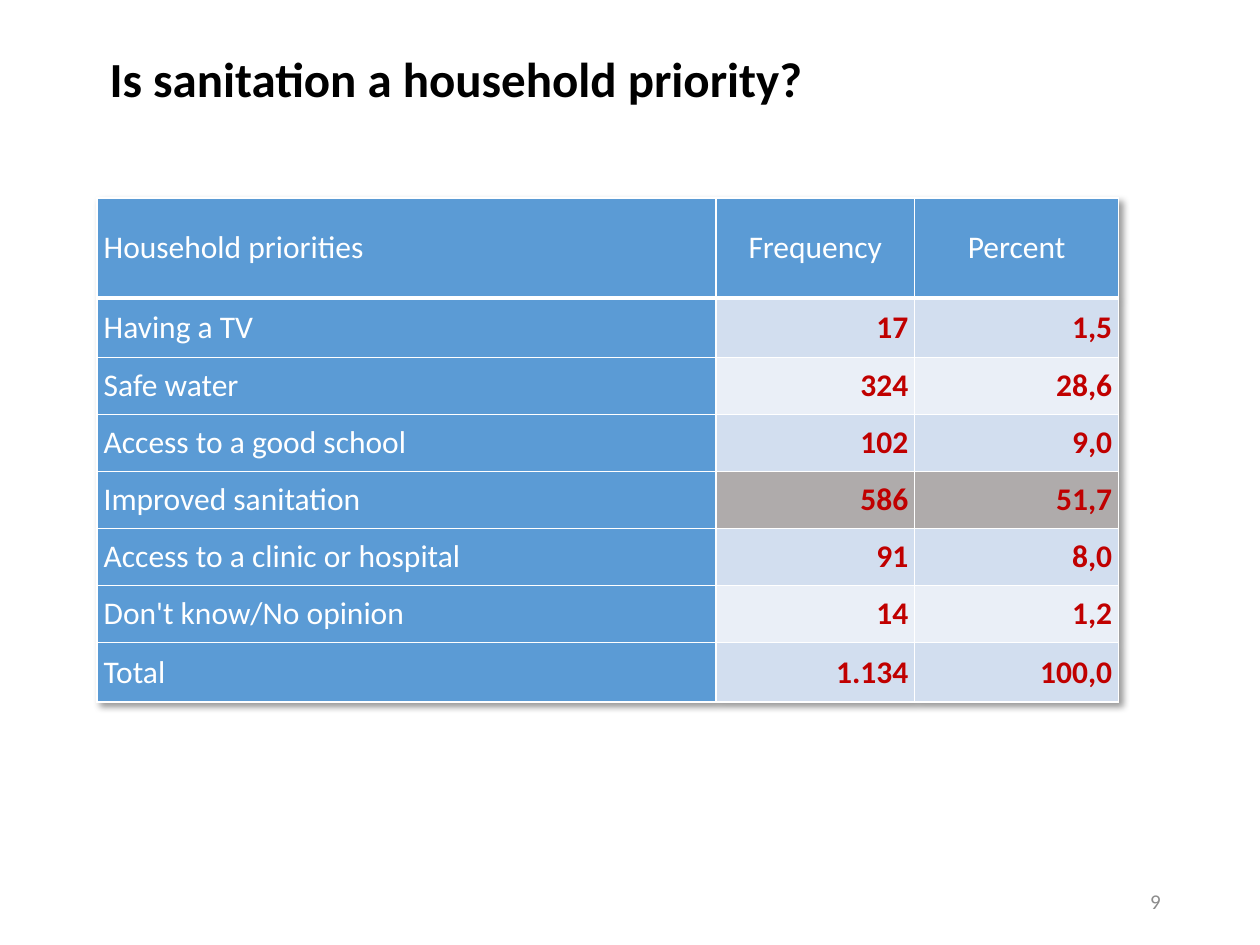
from pptx import Presentation
from pptx.dml.color import RGBColor as RGB
from pptx.enum.text import MSO_ANCHOR as Anchor, PP_ALIGN as Align
from pptx.oxml import parse_xml
from pptx.oxml.ns import nsdecls
from pptx.util import Cm, Pt

# Content
TITLE = "Is sanitation a household priority?"
PAGE = "9"
HEADER = ("Household priorities", "Frequency", "Percent")
ROWS = [
    ("Having a TV", "17", "1,5"),
    ("Safe water", "324", "28,6"),
    ("Access to a good school", "102", "9,0"),
    ("Improved sanitation", "586", "51,7"),
    ("Access to a clinic or hospital", "91", "8,0"),
    ("Don't know/No opinion", "14", "1,2"),
    ("Total", "1.134", "100,0"),
]
HIGHLIGHT = "Improved sanitation"

# Theme and measures (cm)
THEME = {
    "font": "Calibri",
    "title": {"size": 28, "color": "000000", "bold": True},
    "page": {"size": 12, "color": "8C8C8C", "bold": False},
    "label": {"size": 18, "color": "FFFFFF", "bold": False},
    "value": {"size": 18, "color": "C00000", "bold": True},
    "head_fill": "5B9BD5",
    "bands": ("D2DEEF", "EAEFF7"),
    "highlight": "AFABAB",
    "border": "FFFFFF",
}
COL_W = (12.47, 4.01, 4.11)
HEAD_H, EDGE_H, ROW_H = 2.02, 1.2, 1.15
ROW_HS = [HEAD_H, EDGE_H, *[ROW_H] * (len(ROWS) - 2), EDGE_H]


def write(tf, text, style, align):
    p = tf.paragraphs[0]
    p.alignment = align
    r = p.add_run()
    r.text = text
    fmt = THEME[style]
    font = {"name": THEME["font"], "size": Pt(fmt["size"]), "bold": fmt["bold"]}
    for key, value in font.items():
        setattr(r.font, key, value)
    r.font.color.rgb = RGB.from_string(fmt["color"])
    return p


def add_text(slide, box, text, style, align):
    tf = slide.shapes.add_textbox(*map(Cm, box)).text_frame
    tf.word_wrap = True
    tf.vertical_anchor = Anchor.MIDDLE
    return write(tf, text, style, align)


def add_borders(cell, bottom):
    tc_pr = cell._tc.get_or_add_tcPr()
    for i, (side, width) in enumerate((("L", 1), ("R", 1), ("T", 1), ("B", bottom))):
        tc_pr.insert(i, parse_xml(
            f'<a:ln{side} {nsdecls("a")} w="{Pt(width)}"><a:solidFill>'
            f'<a:srgbClr val="{THEME["border"]}"/></a:solidFill></a:ln{side}>'))


def add_shadow(table):
    table._tbl.tblPr.insert(0, parse_xml(
        f'<a:effectLst {nsdecls("a")}><a:outerShdw blurRad="50800" dist="38100" '
        'dir="2700000" algn="tl" rotWithShape="0"><a:srgbClr val="000000">'
        '<a:alpha val="40000"/></a:srgbClr></a:outerShdw></a:effectLst>'))


def cell_look(row, col, label):
    """Fill, text style and alignment of a table cell."""
    if row == 0 or col == 0:
        return THEME["head_fill"], "label", Align.CENTER if col else Align.LEFT
    band = THEME["bands"][(row - 1) % 2]
    return THEME["highlight"] if label == HIGHLIGHT else band, "value", Align.RIGHT


def add_priorities(slide):
    data = [HEADER, *ROWS]
    box = (1.96, 3.99, sum(COL_W), sum(ROW_HS))
    table = slide.shapes.add_table(len(data), len(COL_W), *map(Cm, box)).table
    for column, width in zip(table.columns, COL_W):
        column.width = Cm(width)
    for row, height in zip(table.rows, ROW_HS):
        row.height = Cm(height)
    cell_format = {"margin_left": Cm(0.13), "margin_right": Cm(0.13),
                   "margin_top": 0, "margin_bottom": 0,
                   "vertical_anchor": Anchor.MIDDLE}
    for i, texts in enumerate(data):
        for j, text in enumerate(texts):
            cell = table.cell(i, j)
            fill, style, align = cell_look(i, j, texts[0])
            for key, value in cell_format.items():
                setattr(cell, key, value)
            cell.fill.solid()
            cell.fill.fore_color.rgb = RGB.from_string(fill)
            add_borders(cell, bottom=1 if i else 3)
            write(cell.text_frame, text, style, align)
    add_shadow(table)


def main():
    prs = Presentation()
    prs.slide_width, prs.slide_height = Cm(25.4), Cm(19.05)
    slide = prs.slides.add_slide(prs.slide_layouts[6])

    # Title, page number, table
    p = add_text(slide, (1.96, 0.56, 22.86, 2.16), TITLE, "title", Align.LEFT)
    p.line_spacing = 0.9
    add_text(slide, (17.93, 17.65, 5.72, 1.02), PAGE, "page", Align.RIGHT)
    add_priorities(slide)

    prs.save("out.pptx")


if __name__ == "__main__":
    main()
